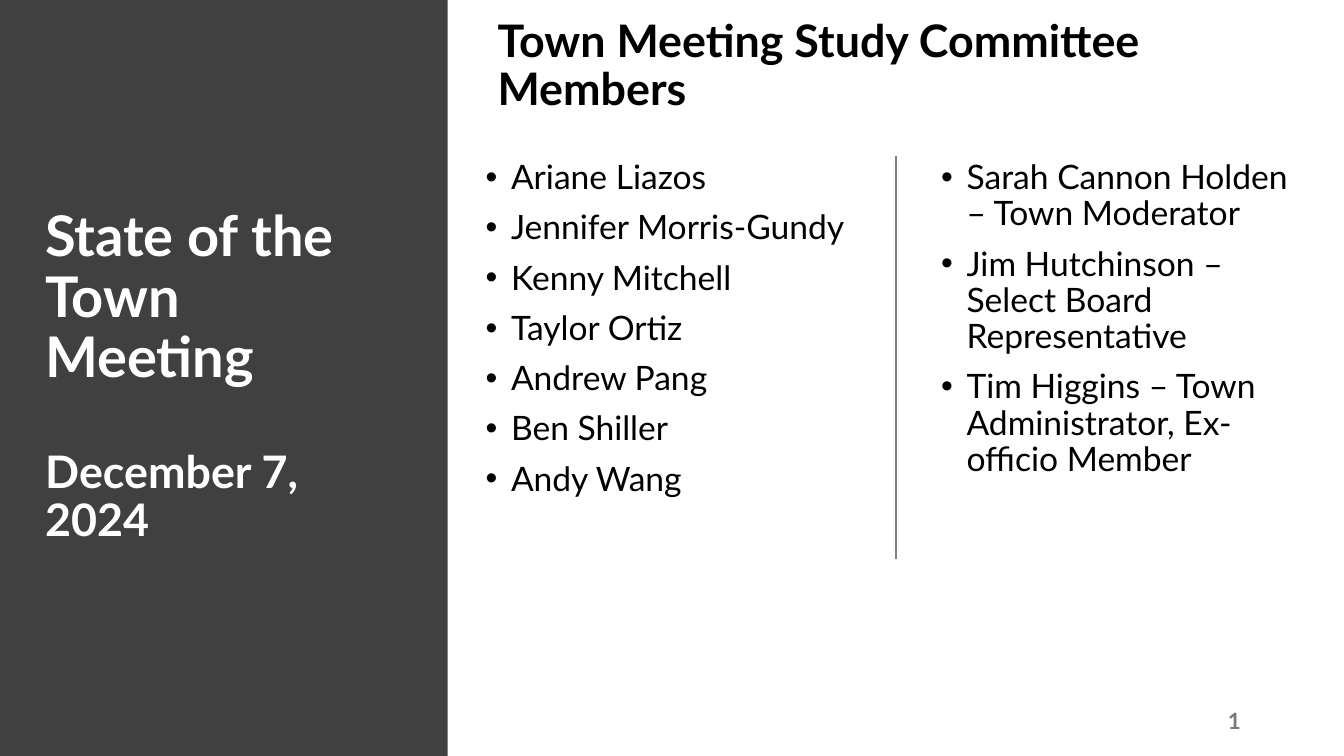
import dataclasses
import typing

import lxml.etree
import pptx
import pptx.dml.color
import pptx.enum.shapes
import pptx.enum.text
import pptx.oxml.ns
import pptx.util

Cm = pptx.util.Cm
Pt = pptx.util.Pt
ALIGN = pptx.enum.text.PP_ALIGN
ANCHOR = pptx.enum.text.MSO_ANCHOR

COLORS = {
    "panel": "404040",
    "white": "FFFFFF",
    "black": "000000",
    "rule": "808080",
    "number": "797979",
}
HEIGHT = 19.05
INDENT = 0.64


@dataclasses.dataclass
class Line:
    text: str
    size: int
    before: float = 0


@dataclasses.dataclass
class Block:
    left: float
    top: float
    width: float
    height: float
    lines: typing.List[Line]
    color: str = "black"
    bold: bool = True
    middle: bool = True
    bullet: bool = False
    right: bool = False


def tint(name: str) -> pptx.dml.color.RGBColor:
    return pptx.dml.color.RGBColor.from_string(COLORS[name])


def items(names: typing.List[str]) -> typing.List[Line]:
    return [Line(name, 24, 10) for name in names]


def add_bullet(para) -> None:
    props = para._p.get_or_add_pPr()
    props.set("marL", str(Cm(INDENT)))
    props.set("indent", str(-Cm(INDENT)))
    font = lxml.etree.SubElement(props, pptx.oxml.ns.qn("a:buFont"))
    font.set("typeface", "Arial")
    mark = lxml.etree.SubElement(props, pptx.oxml.ns.qn("a:buChar"))
    mark.set("char", "•")


def add_block(slide, block: Block) -> None:
    box = slide.shapes.add_textbox(
        Cm(block.left), Cm(block.top), Cm(block.width), Cm(block.height)
    )
    frame = box.text_frame
    frame.word_wrap = True
    frame.vertical_anchor = ANCHOR.MIDDLE if block.middle else ANCHOR.TOP
    for index, line in enumerate(block.lines):
        para = frame.add_paragraph() if index else frame.paragraphs[0]
        para.alignment = ALIGN.RIGHT if block.right else ALIGN.LEFT
        para.line_spacing = 1.0 if block.right else 0.9
        para.space_before = Pt(line.before)
        if block.bullet:
            add_bullet(para)
        run = para.add_run()
        run.text = line.text
        run.font.name = "Lato"
        run.font.size = Pt(line.size)
        run.font.bold = block.bold
        run.font.color.rgb = tint(block.color)


def add_panel(slide) -> None:
    panel = slide.shapes.add_shape(
        pptx.enum.shapes.MSO_SHAPE.RECTANGLE, 0, 0, Cm(11.28), Cm(HEIGHT)
    )
    panel.shadow.inherit = False
    panel.fill.solid()
    panel.fill.fore_color.rgb = tint("panel")
    panel.line.fill.background()


def add_rule(slide) -> None:
    rule = slide.shapes.add_connector(
        pptx.enum.shapes.MSO_CONNECTOR.STRAIGHT,
        Cm(22.58), Cm(3.92), Cm(22.58), Cm(14.08),
    )
    rule.line.color.rgb = tint("rule")
    rule.line.width = Pt(1)
    lxml.etree.SubElement(
        rule._element.spPr, pptx.oxml.ns.qn("a:effectLst")
    )


BLOCKS = [
    Block(
        0.89, 3.45, 9.47, 12.12,
        [Line("State of the Town Meeting", 40), Line("December 7, 2024", 32, 43)],
        color="white",
    ),
    Block(
        11.99, 3.92, 10.06, 12.12,
        items([
            "Ariane Liazos",
            "Jennifer Morris-Gundy",
            "Kenny Mitchell",
            "Taylor Ortiz",
            "Andrew Pang",
            "Ben Shiller",
            "Andy Wang",
        ]),
        bold=False, middle=False, bullet=True,
    ),
    Block(
        23.47, 3.92, 9.37, 12.12,
        items([
            "Sarah Cannon Holden – Town Moderator",
            "Jim Hutchinson – Select Board Representative",
            "Tim Higgins – Town Administrator, Ex-officio Member",
        ]),
        bold=False, middle=False, bullet=True,
    ),
    Block(25.55, 17.65, 5.97, 1.02, [Line("1", 16)], color="number", right=True),
    Block(
        12.29, 0.71, 20.55, 1.96,
        [Line("Town Meeting Study Committee Members", 32)],
    ),
]


def main() -> None:
    deck = pptx.Presentation()
    deck.slide_width = Cm(33.87)
    deck.slide_height = Cm(HEIGHT)
    slide = deck.slides.add_slide(deck.slide_layouts[6])
    add_panel(slide)
    add_rule(slide)
    for block in BLOCKS:
        add_block(slide, block)
    deck.save("out.pptx")


if __name__ == "__main__":
    main()
